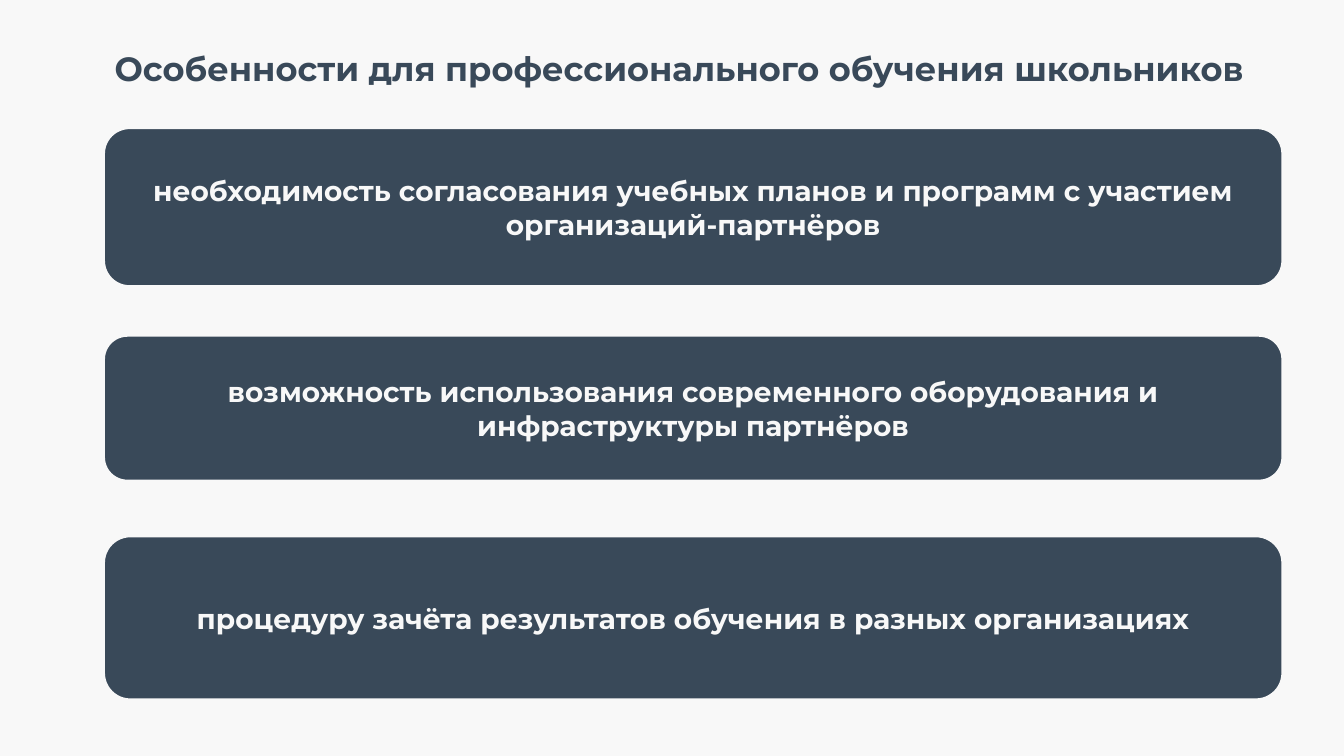
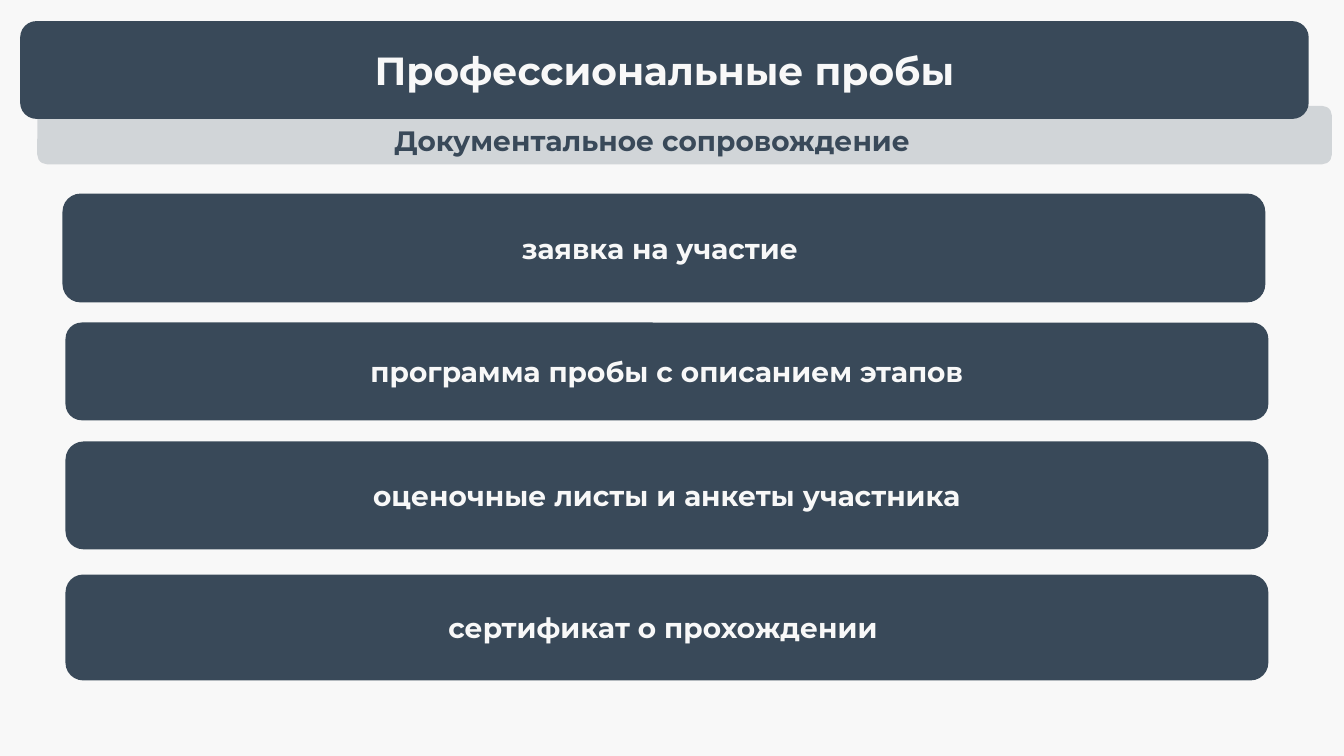
from pptx import Presentation
from pptx.dml.color import RGBColor
from pptx.enum import shapes, text
from pptx.oxml import parse_xml
from pptx.oxml.ns import nsdecls
from pptx.util import Inches, Pt

SLATE = RGBColor(0x39, 0x49, 0x59)
PAPER = RGBColor(0xF8, 0xF8, 0xF8)
FONT = "Montserrat"
TITLE_ONLY = 5

# Each panel: text, left and top within the region, height (inches)
FEATURES = [
    ("необходимость согласования учебных планов и программ с участием "
     "организаций-партнёров", 0, 0, 1.59),
    ("возможность использования современного оборудования и "
     "инфраструктуры партнёров", 0, 2.06, 1.46),
    ("процедуру зачёта результатов обучения в разных организациях", 0, 4.05, 1.64),
]
DOCUMENTS = [
    ("заявка на участие ", 0, 0, 1.08),
    ("программа пробы с описанием этапов", 0.03, 1.28, 0.97),
    ("оценочные листы и анкеты участника", 0.03, 2.46, 1.07),
    ("сертификат о прохождении ", 0.03, 3.78, 1.05),
]


def write(holder, wording, size, color, anchor=text.MSO_ANCHOR.MIDDLE):
    frame = holder.text_frame
    frame.text = wording
    frame.word_wrap = True
    frame.vertical_anchor = anchor
    paragraph = frame.paragraphs[0]
    paragraph.alignment = text.PP_ALIGN.CENTER
    font = paragraph.runs[0].font
    font.name, font.size, font.bold = FONT, Pt(size), True
    font.color.rgb = color


def add_panel(slide, left, top, width, height, opacity=None, outlined=False):
    """Add a rounded slate panel; opacity is in percent."""
    panel = slide.shapes.add_shape(
        shapes.MSO_SHAPE.ROUNDED_RECTANGLE,
        Inches(left), Inches(top), Inches(width), Inches(height))
    panel.shadow.inherit = False
    panel.fill.solid()
    panel.fill.fore_color.rgb = SLATE
    if opacity is not None:
        tint = panel.fill._xPr.solidFill.srgbClr
        tint.append(parse_xml(f'<a:alpha {nsdecls("a")} val="{opacity * 1000}"/>'))
    if outlined:
        panel.line.color.rgb = PAPER
        panel.line.width = Pt(3)
    else:
        panel.line.fill.background()
    return panel


def add_panel_stack(slide, left, top, width, entries, outlined=False):
    for wording, dx, dy, height in entries:
        panel = add_panel(slide, left + dx, top + dy, width, height, outlined=outlined)
        write(panel, wording, 20, PAPER)


def place_title(slide, left, top, width, height, wording, size, color):
    """Fill the title placeholder and bring it to the front."""
    title = slide.shapes.title
    title.left, title.top = Inches(left), Inches(top)
    title.width, title.height = Inches(width), Inches(height)
    write(title, wording, size, color)
    title.text_frame.auto_size = text.MSO_AUTO_SIZE.NONE
    slide.shapes._spTree.append(title._element)


def add_banner(slide, left, top, width, height, wording, subtitle):
    """Add a title banner over a pale subtitle strip."""
    add_panel(slide, left + 0.17, top + 0.84, width + 0.06, 0.58, opacity=20)
    caption = slide.shapes.add_textbox(
        Inches(left + 0.27), Inches(top + 0.97), Inches(12), Inches(0.44))
    write(caption, subtitle, 20, SLATE, text.MSO_ANCHOR.TOP)
    add_panel(slide, left, top, width, height)
    place_title(slide, left, top, width, height, wording, 28, PAPER)


def build_features(slide):
    place_title(slide, 0.29, 0.43, 12.89, 0.5,
                "Особенности для профессионального обучения школьников", 24, SLATE)
    add_panel_stack(slide, 1.02, 1.26, 11.71, FEATURES, outlined=True)


def build_documents(slide):
    add_banner(slide, 0.2, 0.21, 12.78, 0.97,
               "Профессиональные пробы", "Документальное сопровождение")
    add_panel_stack(slide, 0.62, 1.92, 11.93, DOCUMENTS)


def main():
    prs = Presentation()
    prs.slide_width, prs.slide_height = Inches(13.33), Inches(7.5)
    backdrop = prs.slide_master.background.fill
    backdrop.solid()
    backdrop.fore_color.rgb = PAPER
    for build in (build_features, build_documents):
        build(prs.slides.add_slide(prs.slide_layouts[TITLE_ONLY]))
    prs.save("out.pptx")


if __name__ == "__main__":
    main()
